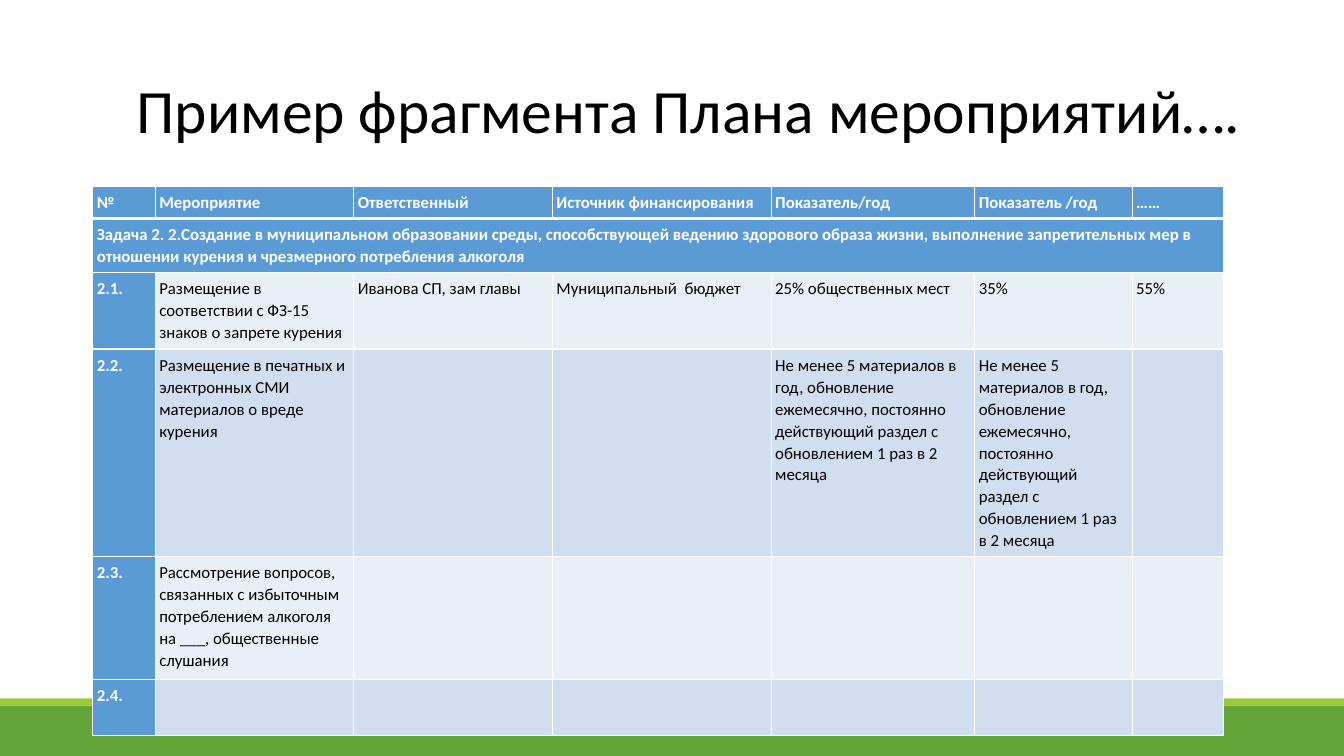
from dataclasses import dataclass

from lxml import etree
from pptx import Presentation
from pptx.dml.color import RGBColor
from pptx.enum.shapes import MSO_SHAPE
from pptx.enum.text import MSO_ANCHOR, PP_ALIGN
from pptx.oxml.ns import qn
from pptx.util import Inches, Pt

RECT = MSO_SHAPE.RECTANGLE
MIDDLE = MSO_ANCHOR.MIDDLE
RIGHT = PP_ALIGN.RIGHT

TITLE = "Пример фрагмента Плана мероприятий…."
HEAD = ["№", "Мероприятие", "Ответственный", "Источник финансирования",
        "Показатель/год", "Показатель /год", "……"]
TASK = ("Задача 2. 2.Создание в муниципальном образовании среды, способствующей "
        "ведению здорового образа жизни, выполнение запретительных мер в отношении "
        "курения и чрезмерного потребления алкоголя")
MEDIA = ("Не менее 5 материалов в год, обновление ежемесячно, постоянно "
         "действующий раздел с обновлением 1 раз в 2 месяца")
STEPS = [
    ["2.1.", "Размещение в соответствии с ФЗ-15 знаков о запрете курения",
     "Иванова СП, зам главы", "Муниципальный  бюджет", "25% общественных мест",
     "35%", "55%"],
    ["2.2.", "Размещение в печатных и электронных СМИ материалов о вреде курения",
     "", "", MEDIA, MEDIA, ""],
    ["2.3.", "Рассмотрение вопросов, связанных с избыточным потреблением алкоголя "
     "на ___, общественные слушания", "", "", "", "", ""],
    ["2.4.", "", "", "", "", "", ""],
]
ROWS = [HEAD, [TASK] + [""] * (len(HEAD) - 1)] + STEPS

WIDE, HIGH = 13.33, 7.5
COLS = [0.62, 1.97, 1.97, 2.17, 2.02, 1.56, 0.91]
TALL = [0.31, 0.53, 0.76, 2.05, 1.22, 0.56]
LEFT, TOP = 0.92, 1.85


@dataclass(frozen=True)
class Theme:
    font: str = "Calibri"
    title: int = 44
    body: int = 12
    ink: str = "000000"
    white: str = "FFFFFF"
    blue: str = "5B9BD5"
    bands: tuple = ("E9EFF7", "D1DEEF")
    green: str = "63A537"
    lime: str = "99CB38"
    thin: float = 0.96
    thick: float = 3


THEME = Theme()


def style(para, size, color, bold, space):
    font = para.font
    font.name, font.size, font.bold = THEME.font, Pt(size), bold
    font.color.rgb = RGBColor.from_string(color)
    para.line_spacing = space


def add_band(slide, top, high, color):
    band = slide.shapes.add_shape(RECT, 0, Inches(top), Inches(WIDE), Inches(high))
    band.shadow.inherit = False
    band.fill.solid()
    band.fill.fore_color.rgb = RGBColor.from_string(color)
    band.line.fill.background()


def add_edge(cell, side, width):
    props = cell._tc.get_or_add_tcPr()
    line = etree.SubElement(props, qn(f"a:ln{side}"), w=str(Pt(width)))
    fill = etree.SubElement(line, qn("a:solidFill"))
    etree.SubElement(fill, qn("a:srgbClr"), val=THEME.white)


def fill_cell(cell, text, row, col):
    strong = row < 2 or col == 0
    cell.text = text
    cell.margin_left = cell.margin_right = Inches(0.04)
    cell.margin_top = cell.margin_bottom = Inches(0.05)
    style(cell.text_frame.paragraphs[0], THEME.body,
          THEME.white if strong else THEME.ink, strong, 1.07)
    heavy = {(0, "B"), (1, "T")}
    for side in "LRTB":
        add_edge(cell, side, THEME.thick if (row, side) in heavy else THEME.thin)
    cell.fill.solid()
    color = THEME.blue if strong else THEME.bands[row % 2]
    cell.fill.fore_color.rgb = RGBColor.from_string(color)


def add_plan(slide):
    frame = slide.shapes.add_table(len(ROWS), len(COLS), Inches(LEFT), Inches(TOP),
                                   Inches(sum(COLS)), Inches(sum(TALL)))
    table = frame.table
    for col, wide in zip(table.columns, COLS):
        col.width = Inches(wide)
    for row, high in zip(table.rows, TALL):
        row.height = Inches(high)
    for r, texts in enumerate(ROWS):
        for c, text in enumerate(texts):
            fill_cell(table.cell(r, c), text, r, c)
    table.cell(1, 0).merge(table.cell(1, len(COLS) - 1))


def add_title(slide):
    title = slide.shapes.title
    title.left, title.top = Inches(1.19), Inches(0.4)
    title.width, title.height = Inches(11.23), Inches(1.45)
    title.text = TITLE
    title.text_frame.vertical_anchor = MIDDLE
    para = title.text_frame.paragraphs[0]
    para.alignment = RIGHT
    style(para, THEME.title, THEME.ink, False, 0.9)


def main():
    deck = Presentation()
    deck.slide_width, deck.slide_height = Inches(WIDE), Inches(HIGH)
    slide = deck.slides.add_slide(deck.slide_layouts[5])
    add_band(slide, 7, 0.5, THEME.green)
    add_band(slide, 6.93, 0.07, THEME.lime)
    add_title(slide)
    add_plan(slide)
    deck.save("out.pptx")


if __name__ == "__main__":
    main()
